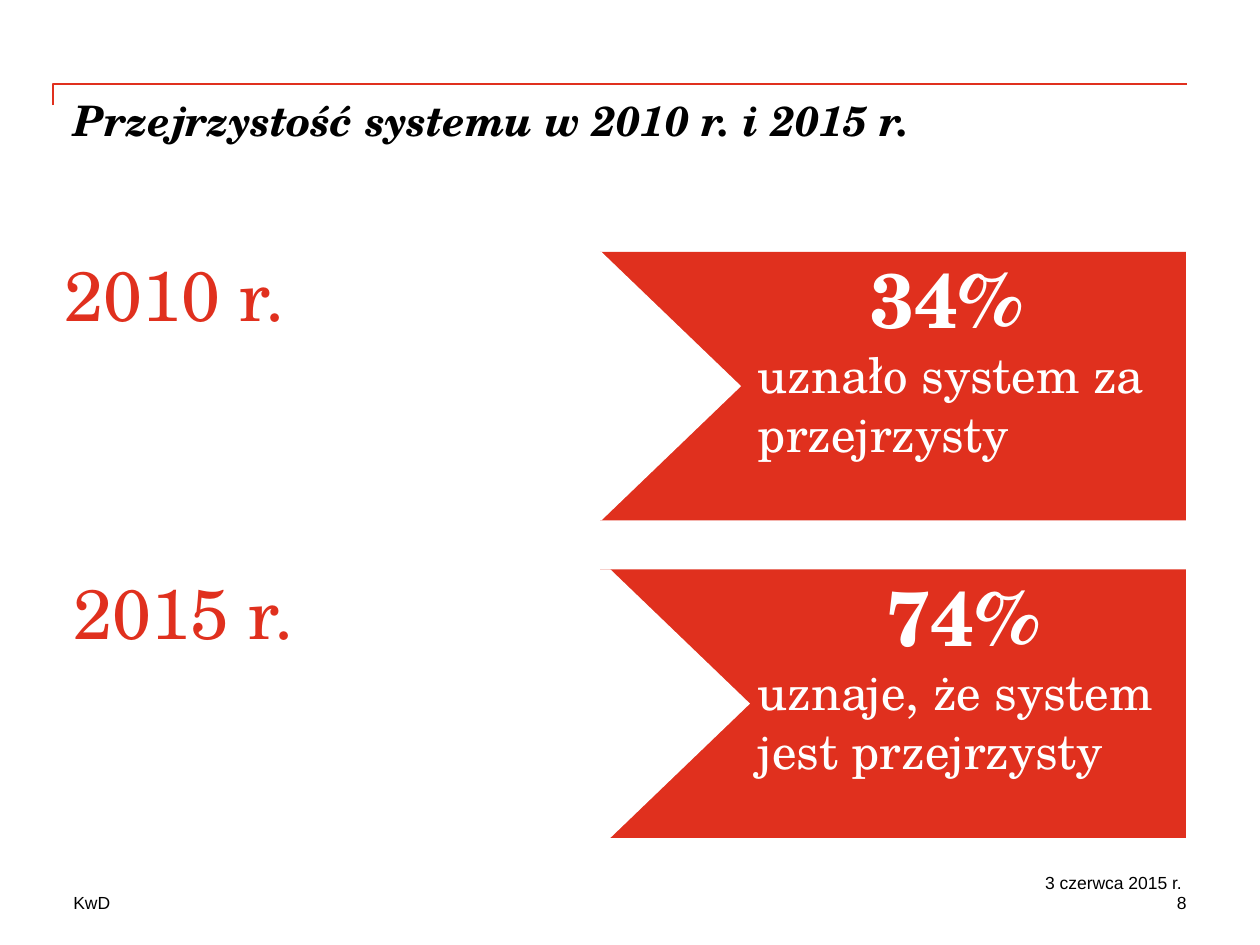
"""Build a slide comparing how clear the system seemed in 2010 and 2015."""
from pptx import Presentation
from pptx.dml.color import RGBColor
from pptx.enum.shapes import MSO_SHAPE
from pptx.enum.text import MSO_ANCHOR, PP_ALIGN
from pptx.util import Cm, Pt

RED = RGBColor(0xE0, 0x30, 0x1E)
WHITE = RGBColor(0xFF, 0xFF, 0xFF)
BLACK = RGBColor(0, 0, 0)
SERIF, SANS = "TeX Gyre Schola", "Arial"
LEFT, CENTER, RIGHT = PP_ALIGN.LEFT, PP_ALIGN.CENTER, PP_ALIGN.RIGHT
RECT, PLATE = MSO_SHAPE.RECTANGLE, MSO_SHAPE.PENTAGON
TOP = MSO_ANCHOR.TOP


def write(shape, lines, left=0, right=0):
    frame = shape.text_frame
    frame.word_wrap = True
    frame.vertical_anchor = TOP
    frame.margin_left, frame.margin_right = Cm(left), Cm(right)
    frame.margin_top = frame.margin_bottom = 0
    for i, (text, size, face, color, bold, align, indent) in enumerate(lines):
        para = frame.add_paragraph() if i else frame.paragraphs[0]
        para.text = text
        para.alignment = align
        font = para.font
        font.size, font.name, font.bold = Pt(size), face, bold
        font.color.rgb = color
        if indent:
            props = para._p.get_or_add_pPr()
            props.set("marL", str(Cm(indent)))
            props.set("indent", "0")


def block(group, kind, x, y, width, color):
    shape = group.shapes.add_shape(kind, Cm(x), Cm(y), Cm(width), Cm(5.41))
    shape.shadow.inherit = False
    shape.fill.solid()
    shape.fill.fore_color.rgb = color
    shape.line.fill.background()
    return shape


deck = Presentation()
deck.slide_width, deck.slide_height = Cm(25.4), Cm(19.05)
slide = deck.slides.add_slide(deck.slide_layouts[6])
shapes = slide.shapes

path = shapes.build_freeform(Cm(1.07), Cm(2.12))
path.add_line_segments([(Cm(1.07), Cm(1.69)), (Cm(23.92), Cm(1.69))], close=False)
rule = path.convert_to_shape()
rule.shadow.inherit = False
rule.fill.background()
rule.line.color.rgb = RED
rule.line.width = Pt(1)

title = shapes.add_textbox(Cm(1.48), Cm(1.9), Cm(22.43), Cm(2.54))
write(title, [("Przejrzystość systemu w 2010 r. i 2015 r.", 24, SERIF, BLACK, True, LEFT, 0)])
title.text_frame.paragraphs[0].font.italic = True

rows = [
    ("2010 r.", "34%", "uznało system za przejrzysty", 1.3, 5.08, 2.16),
    ("2015 r.", "74%", "uznaje, że system jest przejrzysty", 1.48, 11.48, 2.82),
]
for year, share, claim, x, y, indent in rows:
    group = shapes.add_group_shape()
    panel = block(group, RECT, 12.1, y, 11.81, RED)
    write(panel, [
        (share, 44, SERIF, WHITE, True, CENTER, indent),
        (claim, 28, SERIF, WHITE, False, LEFT, 3),
    ], 0.18, 0.18)
    plate = block(group, PLATE, x, y, 13.64, WHITE)
    plate.adjustments[0] = 0.52
    write(plate, [(year, 40, SERIF, RED, False, LEFT, 0)], 0, 2.11)

notes = [
    ("KwD", 1.48, 17.98, 7.19, LEFT),
    ("8", 19.69, 17.98, 4.23, RIGHT),
    ("3 czerwca 2015 r. ", 19.69, 17.57, 4.23, RIGHT),
]
for text, x, y, width, align in notes:
    box = shapes.add_textbox(Cm(x), Cm(y), Cm(width), Cm(0.43))
    write(box, [(text, 10, SANS, BLACK, False, align, 0)])

deck.save("out.pptx")
